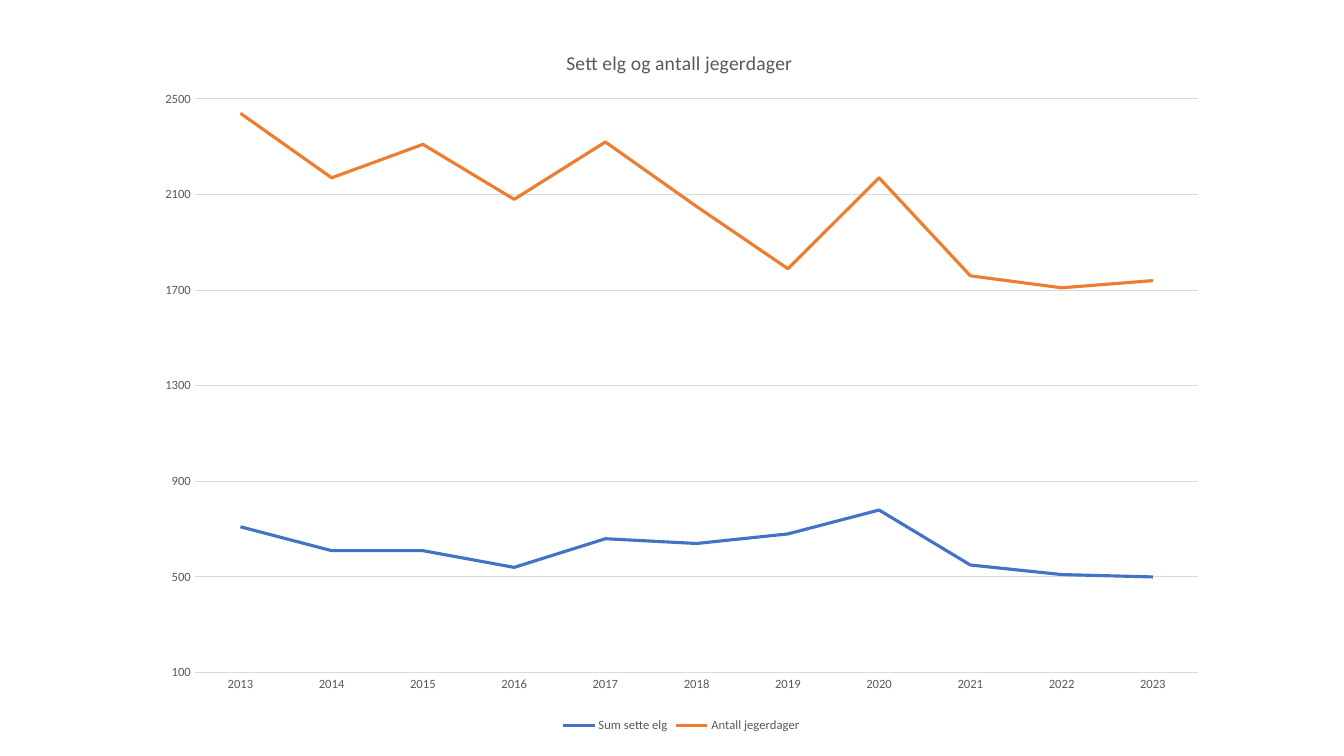
from dataclasses import dataclass

from lxml.etree import SubElement
from pptx import Presentation
from pptx.chart.data import CategoryChartData
from pptx.dml.color import RGBColor
from pptx.enum.chart import XL_CHART_TYPE, XL_LEGEND_POSITION, XL_TICK_MARK
from pptx.oxml.ns import qn
from pptx.util import Inches, Pt


@dataclass(frozen=True)
class Theme:
    font: str = "Calibri"
    text: str = "595959"
    grid: str = "D9D9D9"
    series: tuple = ("4472C4", "ED7D31")
    title_size: float = 14
    label_size: float = 9
    grid_width: float = 0.75
    series_width: float = 2.25


class SlideBuilder:
    def __init__(self, slide, theme):
        self.slide = slide
        self.theme = theme

    def style_font(self, font, size):
        font.name = self.theme.font
        font.size = Pt(size)
        font.bold = False
        font.color.rgb = RGBColor.from_string(self.theme.text)

    def style_line(self, line, color, width):
        line.color.rgb = RGBColor.from_string(color)
        line.width = Pt(width)

    def place(self, element, **fractions):
        """Fix a chart part at fractions of the chart's size."""
        layout = element.find(qn("c:layout"))
        if layout is None:
            layout = SubElement(element, qn("c:layout"))
            before = element.find(qn("c:tx"))
            if before is not None:
                before.addnext(layout)
            else:
                element.insert(0, layout)
        manual = SubElement(layout, qn("c:manualLayout"))
        if "w" in fractions:
            SubElement(manual, qn("c:layoutTarget")).set("val", "inner")
        for side in ("x", "y"):
            SubElement(manual, qn(f"c:{side}Mode")).set("val", "edge")
        for key, value in fractions.items():
            SubElement(manual, qn(f"c:{key}")).set("val", str(value))

    def add_title(self, chart, text):
        title = chart.chart_title
        run = title.text_frame.paragraphs[0].add_run()
        run.text = text
        self.style_font(run.font, self.theme.title_size)
        title.include_in_layout = False
        self.place(chart._chartSpace.chart.find(qn("c:title")), x=0.39, y=0.03)

    def style_axes(self, chart, minimum, maximum, step):
        theme = self.theme
        for axis in (chart.category_axis, chart.value_axis):
            axis.major_tick_mark = axis.minor_tick_mark = XL_TICK_MARK.NONE
            self.style_font(axis.tick_labels.font, theme.label_size)
        self.style_line(chart.category_axis.format.line, theme.grid, theme.grid_width)
        values = chart.value_axis
        values.minimum_scale, values.maximum_scale = minimum, maximum
        values.major_unit = step
        values.format.line.fill.background()
        values.has_major_gridlines = True
        self.style_line(values.major_gridlines.format.line, theme.grid, theme.grid_width)

    def add_line_chart(self, box, title, categories, series, scale):
        data = CategoryChartData()
        data.categories = categories
        for name, values in series.items():
            data.add_series(name, values)
        frame = self.slide.shapes.add_chart(
            XL_CHART_TYPE.LINE, *(Inches(length) for length in box), data)
        chart = frame.chart
        self.style_font(chart.font, self.theme.label_size)
        self.add_title(chart, title)
        self.style_axes(chart, *scale)

        # Series lines
        plot = chart.plots[0]
        plot.vary_by_categories = False
        for line, color in zip(plot.series, self.theme.series):
            line.smooth = False
            self.style_line(line.format.line, color, self.theme.series_width)

        # Legend and plot area
        chart.has_legend = True
        chart.legend.position = XL_LEGEND_POSITION.BOTTOM
        chart.legend.include_in_layout = False
        self.style_font(chart.legend.font, self.theme.label_size)
        self.place(chart._chartSpace.chart.plotArea, x=0.048, y=0.105, w=0.933, h=0.805)


def main():
    presentation = Presentation()
    presentation.slide_width = Inches(13.33)
    presentation.slide_height = Inches(7.5)
    slide = presentation.slides.add_slide(presentation.slide_layouts[6])

    # Moose sightings and hunter days per year
    SlideBuilder(slide, Theme()).add_line_chart(
        box=(1.42, 0.24, 10.67, 7.07),
        title="Sett elg og antall jegerdager",
        categories=[str(year) for year in range(2013, 2024)],
        series={
            "Sum sette elg": (710, 610, 610, 540, 660, 640, 680, 780, 550, 510, 500),
            "Antall jegerdager": (2440, 2170, 2310, 2080, 2320, 2050,
                                  1790, 2170, 1760, 1710, 1740),
        },
        scale=(100, 2500, 400),
    )
    presentation.save("out.pptx")


if __name__ == "__main__":
    main()
